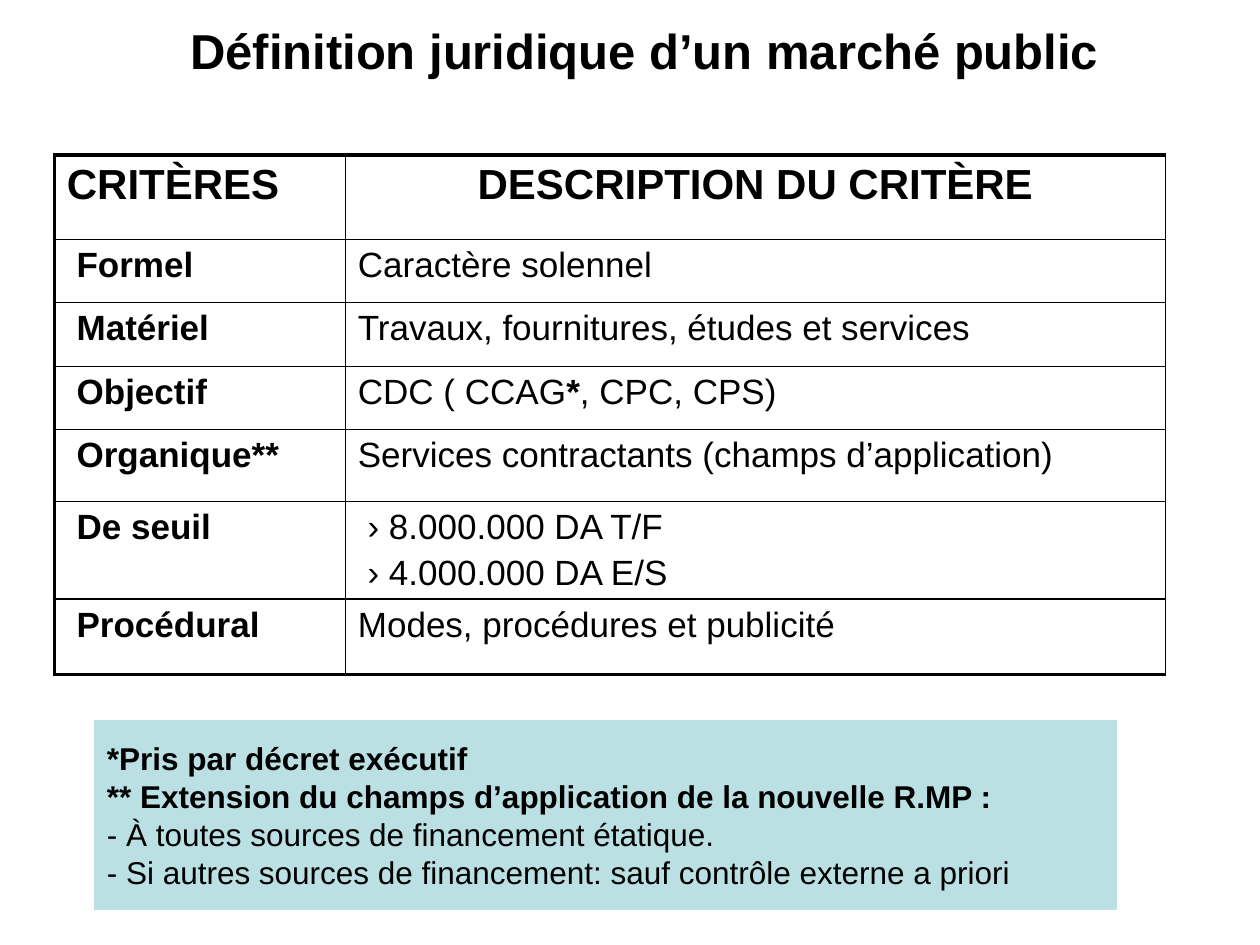
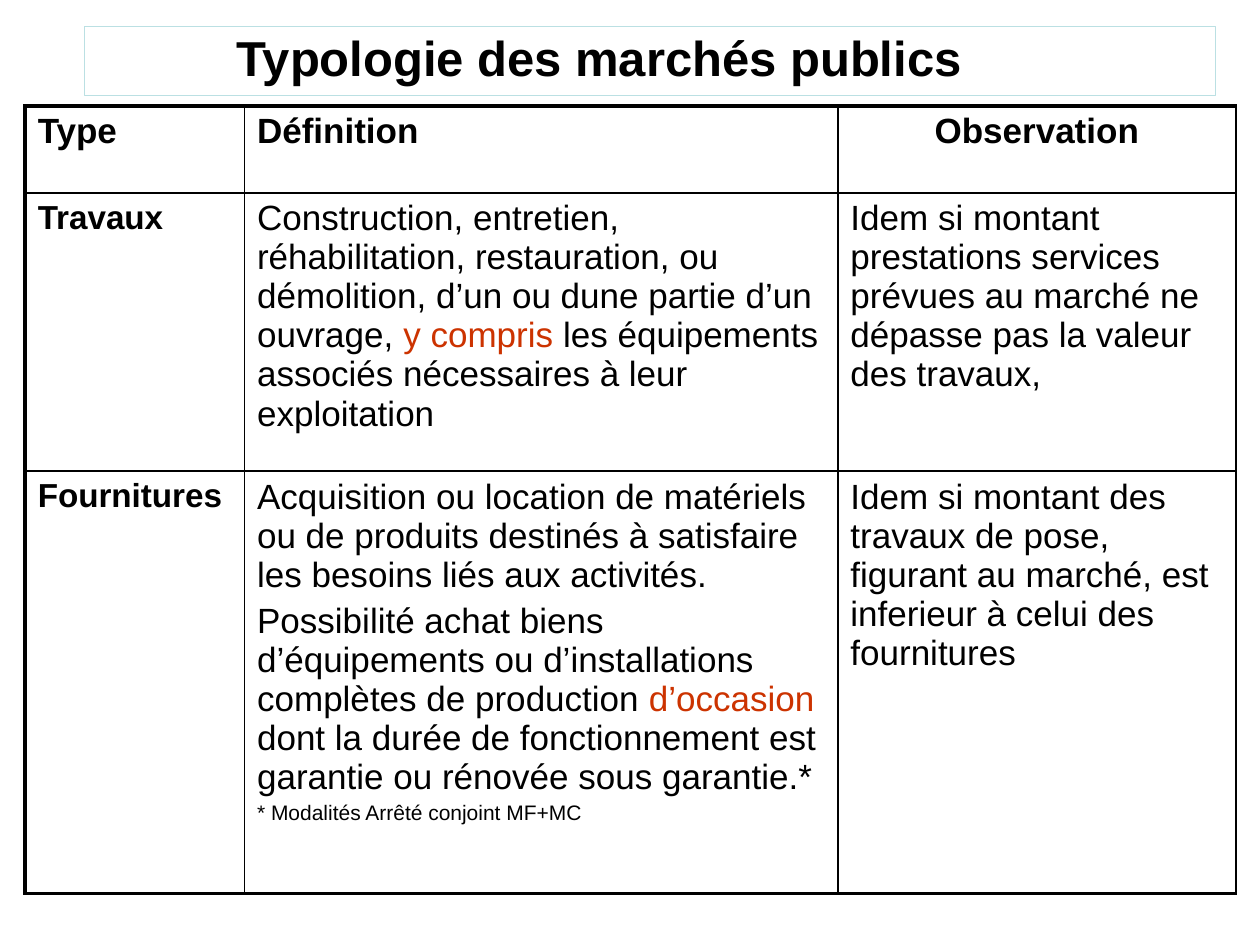
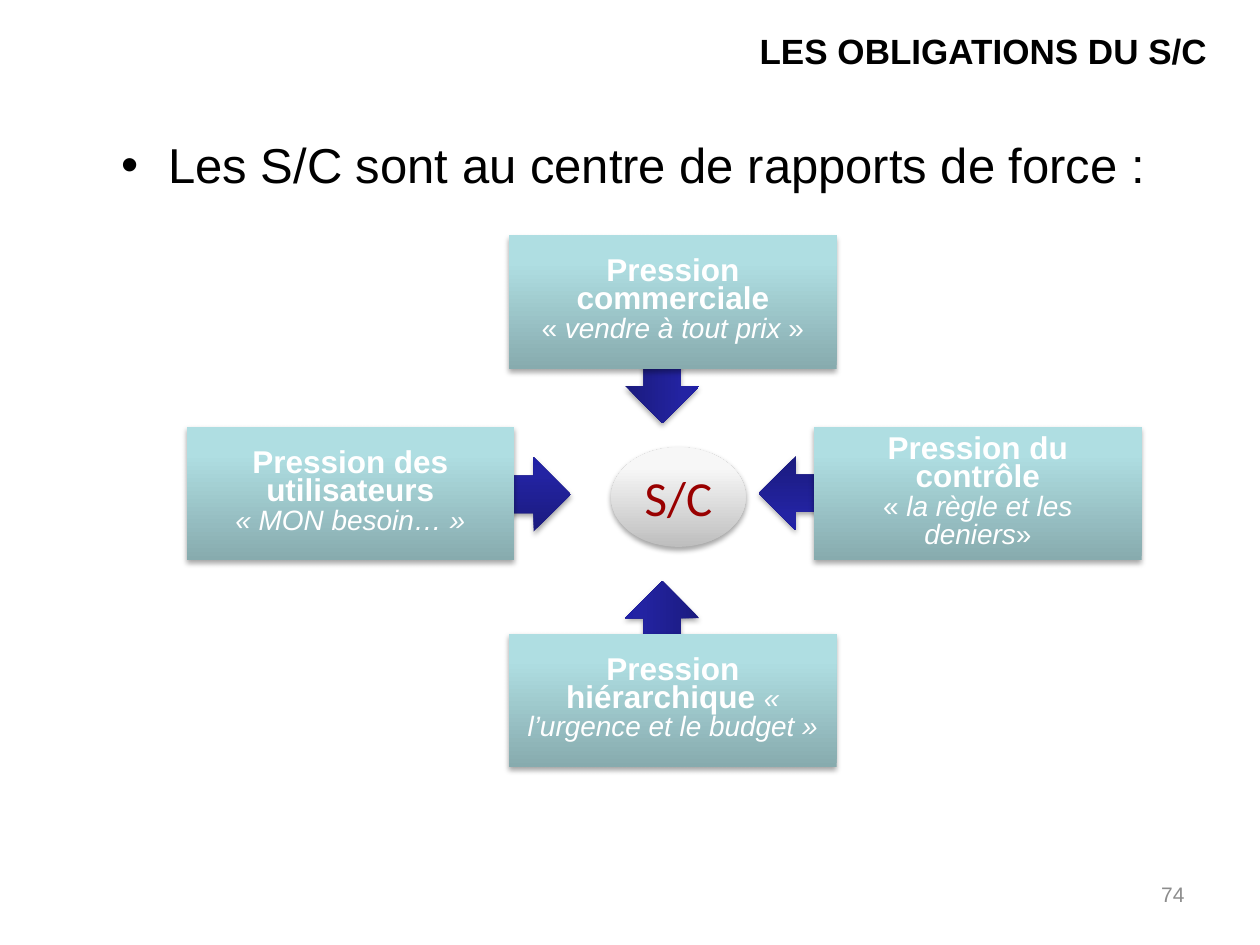
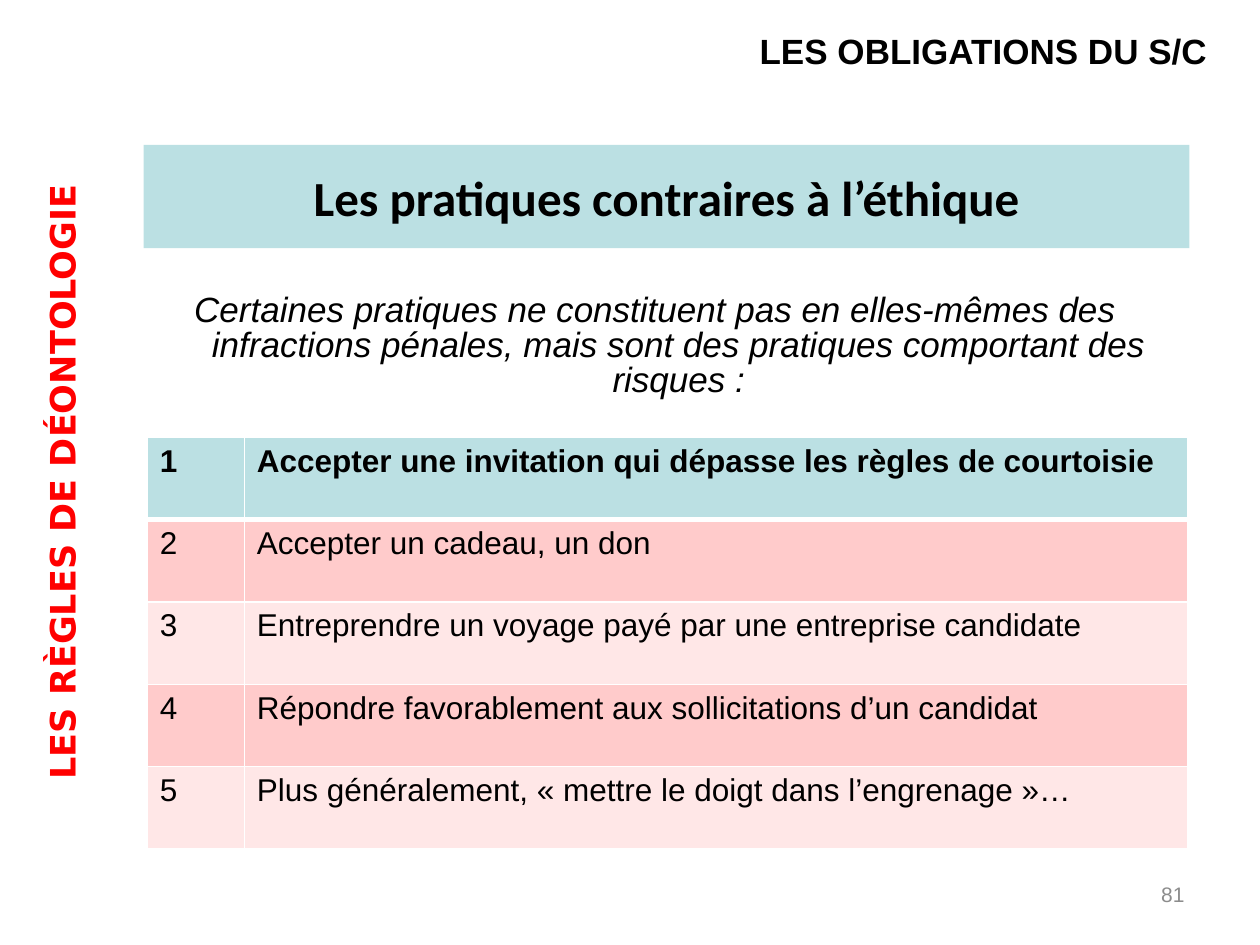
from copy import deepcopy
from dataclasses import dataclass
from typing import NamedTuple

from pptx import Presentation
from pptx.dml.color import RGBColor
from pptx.enum.shapes import MSO_SHAPE
from pptx.enum.text import MSO_ANCHOR, MSO_AUTO_SIZE, PP_ALIGN
from pptx.oxml.ns import qn
from pptx.oxml.xmlchemy import OxmlElement
from pptx.util import Pt

LEFT, CENTER, RIGHT = PP_ALIGN.LEFT, PP_ALIGN.CENTER, PP_ALIGN.RIGHT
TOP, MIDDLE, BOTTOM = MSO_ANCHOR.TOP, MSO_ANCHOR.MIDDLE, MSO_ANCHOR.BOTTOM
RECTANGLE, OVAL, ARROW = MSO_SHAPE.RECTANGLE, MSO_SHAPE.OVAL, MSO_SHAPE.RIGHT_ARROW
NO_AUTOFIT = MSO_AUTO_SIZE.NONE
TITLE_AND_BODY, TITLE_ONLY = 1, 5


@dataclass(frozen=True)
class Theme:
    """Colours, faces and type sizes shared by the slides."""

    ink: str = "000000"
    white: str = "FFFFFF"
    aqua: str = "BBE0E3"
    alert: str = "CC3300"
    hub: str = "990000"
    margin_note: str = "FF0000"
    page_number: str = "8C8C8C"
    bands: tuple = ("FFCBCB", "FFE7E7")
    card_stops: tuple = ((0, "87ABAE"), (0.8, "AFDEE2"), (1, "AFE0E4"))
    arrow_stops: tuple = ((0, "1B1B7E"), (0.8, "2323A3"), (1, "2020A6"))
    hub_stops: tuple = ((0, "BEBEBE"), (0.8, "F7F7F7"), (1, "F8F8F8"))
    face: str = "Arial"
    accent_face: str = "Calibri"
    side_face: str = "DejaVu Sans"
    title: int = 28
    heading: int = 24
    text: int = 20
    row_label: int = 19
    note: int = 18
    quote: int = 16
    small: int = 12
    thin: float = 1
    thick: float = 2.25
    header_rule: float = 3


THEME = Theme()


class Box(NamedTuple):
    """A rectangle in points."""

    left: float
    top: float
    width: float
    height: float

    def lengths(self):
        """Return the four measures as lengths."""
        return [Pt(value) for value in self]

    def inside(self, across, down, width, height):
        """Return a box placed relative to this one."""
        return Box(self.left + across, self.top + down, width, height)


@dataclass
class Span:
    """A stretch of text with its departures from the paragraph."""

    text: str
    bold: bool = None
    italic: bool = None
    size: float = None
    color: str = None


@dataclass
class Para:
    """A paragraph: its text or spans, and its format."""

    content: object
    size: float = THEME.text
    bold: bool = False
    italic: bool = False
    color: str = THEME.ink
    face: str = THEME.face
    align: object = LEFT
    line: float = None
    before: float = 0


OBLIGATIONS_BOX = Box(62, 2, 635, 54)


def rgb(color):
    """Turn a hex string into a colour."""
    return RGBColor.from_string(color)


def style_font(font, look):
    """Apply the settings that a span or paragraph names."""
    font.bold, font.italic = look.bold, look.italic
    if look.size:
        font.size = Pt(look.size)
    if look.color:
        font.color.rgb = rgb(look.color)


def write(frame, paras, anchor=None):
    """Fill a text frame with paragraphs."""
    frame.word_wrap = True
    if anchor is not None:
        frame.auto_size = NO_AUTOFIT
        frame.vertical_anchor = anchor
    for index, look in enumerate(paras):
        para = frame.add_paragraph() if index else frame.paragraphs[0]
        para.alignment = look.align
        para.space_before = Pt(look.before)
        if look.line:
            para.line_spacing = Pt(look.line)
        style_font(para.font, look)
        para.font.name = look.face
        spans = [Span(look.content)] if isinstance(look.content, str) else look.content
        for span in spans:
            run = para.add_run()
            run.text = span.text
            style_font(run.font, span)


def place(shape, box):
    """Move a shape to a box."""
    shape.left, shape.top, shape.width, shape.height = box.lengths()


def add_title(page, box, para, anchor, left=7.2, bottom=3.6):
    """Place and fill the title placeholder."""
    title = page.shapes.title
    place(title, box)
    write(title.text_frame, [para], anchor)
    title.text_frame.margin_left = Pt(left)
    title.text_frame.margin_bottom = Pt(bottom)
    return title


def add_obligations_title(page):
    """Write the heading shared by the obligations slides."""
    heading = Para("LES OBLIGATIONS DU S/C", bold=True, align=RIGHT)
    add_title(page, OBLIGATIONS_BOX, heading, MIDDLE)


def add_label(page, box, para, anchor=TOP):
    """Add a text box holding one paragraph."""
    label = page.shapes.add_textbox(*box.lengths())
    write(label.text_frame, [para], anchor)
    return label


def add_page_number(page, number):
    """Write the page number at the bottom right."""
    look = Para(number, THEME.small, color=THEME.page_number, align=RIGHT)
    add_label(page, Box(516.2, 500.4, 167.8, 28.8), look)


def add_panel(page, box, paras, line=None):
    """Add a flat aqua rectangle with text."""
    panel = page.shapes.add_shape(RECTANGLE, *box.lengths())
    panel.shadow.inherit = False
    panel.fill.solid()
    panel.fill.fore_color.rgb = rgb(THEME.aqua)
    outline(panel, line)
    write(panel.text_frame, paras, MIDDLE)


def outline(shape, color):
    """Give a shape a hairline, or none."""
    if color:
        shape.line.color.rgb = rgb(color)
        shape.line.width = Pt(0.75)
    else:
        shape.line.fill.background()


def add_glossy(page, preset, box, stops, paras=(), turn=0):
    """Add a shape with a vertical gradient and a soft shadow."""
    shape = page.shapes.add_shape(preset, *box.lengths())
    shape.rotation = turn
    outline(shape, None)
    fill = shape.fill
    fill.gradient()
    fill.gradient_angle = 90
    properties = shape.element.spPr
    stop_list = properties.find(qn("a:gradFill")).find(qn("a:gsLst"))
    stop_list.insert(1, deepcopy(stop_list[0]))
    for stop, (position, color) in zip(fill.gradient_stops, stops):
        stop.position = position
        stop.color.rgb = rgb(color)
    shape.shadow.inherit = False
    cast_shadow(properties.find(qn("a:effectLst")))
    if paras:
        write(shape.text_frame, paras, MIDDLE)


def cast_shadow(effects):
    """Add a soft shadow falling downwards."""
    shadow = OxmlElement("a:outerShdw")
    shadow.set("blurRad", str(Pt(3.1)))
    shadow.set("dist", str(Pt(1.8)))
    shadow.set("dir", "5400000")
    shadow.set("rotWithShape", "0")
    color = OxmlElement("a:srgbClr")
    color.set("val", THEME.ink)
    alpha = OxmlElement("a:alpha")
    alpha.set("val", "35000")
    color.append(alpha)
    shadow.append(color)
    effects.append(shadow)


def draw_borders(cell, color, widths):
    """Draw the left, right, top and bottom borders of a cell."""
    properties = cell._tc.get_or_add_tcPr()
    for side, width in zip("LRTB", widths):
        line = OxmlElement(f"a:ln{side}")
        line.set("w", str(Pt(width)))
        solid = OxmlElement("a:solidFill")
        tint = OxmlElement("a:srgbClr")
        tint.set("val", color)
        solid.append(tint)
        line.append(solid)
        properties.append(line)


def frame_widths(row, column, last):
    """Thicken the left, top and bottom of the table."""
    return (
        THEME.thin if column else THEME.thick,
        THEME.thin,
        THEME.thin if row else THEME.thick,
        THEME.thick if row == last else THEME.thin,
    )


def header_widths(row, column, last):
    """Thicken the rule under the first row."""
    return (
        THEME.thin,
        THEME.thin,
        THEME.header_rule if row == 1 else THEME.thin,
        THEME.header_rule if row == 0 else THEME.thin,
    )


def add_grid(page, box, columns, heights, cells, widths, line=THEME.ink, fills=None):
    """Add a table whose cells hold lists of paragraphs."""
    frame = page.shapes.add_table(len(heights), len(columns), *box.lengths())
    table = frame.table
    table.first_row = table.horz_banding = False
    for column, width in zip(table.columns, columns):
        column.width = Pt(width)
    for row, height in zip(table.rows, heights):
        row.height = Pt(height)
    for row, contents in enumerate(cells):
        for column, paras in enumerate(contents):
            cell = table.cell(row, column)
            draw_borders(cell, line, widths(row, column, len(heights) - 1))
            if fills:
                cell.fill.solid()
                cell.fill.fore_color.rgb = rgb(fills[row])
            else:
                cell.fill.background()
            write(cell.text_frame, paras)


def build_definition(deck):
    """Slide on the legal definition of a public contract."""
    page = deck.slides.add_slide(deck.slide_layouts[TITLE_ONLY])
    heading = Para("Définition juridique d’un marché public", THEME.title, bold=True)
    add_title(page, Box(62, -5.8, 646.6, 56.2), heading, BOTTOM, left=46.8, bottom=5.3)
    criteria = [
        ("Formel", ["Caractère solennel"]),
        ("Matériel", ["Travaux, fournitures, études et services"]),
        ("Objectif", [[Span("CDC ( CCAG"), Span("*", bold=True), Span(", CPC, CPS)")]]),
        ("Organique**", ["Services contractants (champs d’application)"]),
        ("De seuil", [" › 8.000.000 DA T/F", " › 4.000.000 DA E/S"]),
        ("Procédural", ["Modes, procédures et publicité"]),
    ]
    cells = [[
        [Para("CRITÈRES", THEME.heading, bold=True)],
        [Para("DESCRIPTION DU CRITÈRE", THEME.heading, bold=True, align=CENTER)],
    ]]
    for name, lines in criteria:
        description = [Para(line, before=4 if index else 0) for index, line in enumerate(lines)]
        cells.append([[Para(f" {name}", bold=True)], description])
    add_grid(page, Box(31, 88.6, 635, 296.6), [166.3, 468.7],
             [48.2, 36, 36.7, 36, 41, 55.4, 43.2], cells, frame_widths)
    notes = [
        ("*Pris par décret exécutif", True),
        ("** Extension du champs d’application de la nouvelle R.MP :", True),
        ("- À toutes sources de financement étatique.", False),
        ("- Si autres sources de financement: sauf contrôle externe a priori", False),
    ]
    paras = [Para(text, THEME.note, bold=bold) for text, bold in notes]
    add_panel(page, Box(54, 411.8, 584, 108), paras, line=THEME.aqua)


def build_typology(deck):
    """Slide on the types of public contract."""
    page = deck.slides.add_slide(deck.slide_layouts[TITLE_ONLY])
    heading = Para("Typologie des marchés publics", THEME.title, bold=True)
    title = add_title(page, Box(48.2, 15.1, 646.6, 39.6), heading, BOTTOM, left=87, bottom=5.3)
    outline(title, THEME.aqua)
    works = Para([
        Span("Construction, entretien, réhabilitation, restauration, ou démolition, "
             "d’un ou dune partie d’un ouvrage, "),
        Span("y compris", color=THEME.alert),
        Span(" les équipements associés nécessaires à leur exploitation"),
    ])
    supplies = [
        Para("Acquisition ou location de matériels ou de produits destinés à "
             "satisfaire les besoins liés aux activités."),
        Para([
            Span("Possibilité achat biens d’équipements ou d’installations "
                 "complètes de production "),
            Span("d’occasion", color=THEME.alert),
            Span(" dont la durée de fonctionnement est garantie ou rénovée sous garantie.*"),
        ], before=4),
        Para("* Modalités Arrêté conjoint MF+MC", THEME.small, before=2.4),
    ]
    cells = [
        [
            [Para("Type", bold=True)],
            [Para("Définition", bold=True)],
            [Para("Observation", bold=True, align=CENTER)],
        ],
        [
            [Para("Travaux", THEME.row_label, bold=True)],
            [works],
            [Para("Idem si montant prestations services prévues au marché ne "
                  "dépasse pas la valeur des travaux,")],
        ],
        [
            [Para("Fournitures", THEME.row_label, bold=True)],
            supplies,
            [Para("Idem si montant des travaux de pose, figurant au marché, est "
                  "inferieur à celui des fournitures")],
        ],
    ]
    add_grid(page, Box(14.4, 60.5, 692, 450), [125.3, 339.1, 227.5],
             [49.7, 159.1, 241.2], cells, frame_widths)


def card_para(content):
    """Return a centred white paragraph for a pressure card."""
    return Para(content, THEME.note, bold=True, color=THEME.white, align=CENTER, line=16)


def quote(text, italic=True):
    """Return a light span for the words under a pressure."""
    return Span(text, bold=False, italic=italic, size=THEME.quote)


def add_pressures(page, box):
    """Draw four pressures pointing at the hub."""
    for across, down, turn in [(250.6, 64.8, 90), (326.9, 126, 180),
                               (177.1, 126.7, 0), (250.6, 197.3, 270)]:
        add_glossy(page, ARROW, box.inside(across, down, 42.5, 42.5),
                   THEME.arrow_stops, turn=turn)
    cards = [
        (184.3, 0, [
            [Span("Pression commerciale")],
            [quote("« ", False), quote("vendre à tout prix"), quote(" »", False)],
        ]),
        (184.3, 227.5, [[Span("Pression hiérarchique "), quote("« l’urgence et le budget »")]]),
        (0, 109.4, [[Span("Pression des utilisateurs")], [quote("« MON besoin… »")]]),
        (358.6, 109.4, [
            [Span("Pression du contrôle")],
            [quote("« ", False), quote("la règle et les deniers"), quote("»", False)],
        ]),
    ]
    for across, down, lines in cards:
        add_glossy(page, RECTANGLE, box.inside(across, down, 187.2, 76.3),
                   THEME.card_stops, [card_para(line) for line in lines])
    hub = Para("S/C", THEME.title, color=THEME.hub, face=THEME.accent_face, align=CENTER)
    add_glossy(page, OVAL, box.inside(242.6, 121, 77, 56.9), THEME.hub_stops, [hub])


def build_pressures(deck):
    """Slide on the pressures around the contracting service."""
    page = deck.slides.add_slide(deck.slide_layouts[TITLE_AND_BODY])
    add_obligations_title(page)
    body = page.placeholders[1]
    place(body, Box(62, 73.4, 635.8, 73.4))
    lead = Para("Les S/C sont au centre de rapports de force :", THEME.title, before=6)
    write(body.text_frame, [lead], TOP)
    add_page_number(page, "74")
    add_pressures(page, Box(106.6, 134.6, 545.8, 303.8))


def build_practices(deck):
    """Slide on practices contrary to ethics."""
    page = deck.slides.add_slide(deck.slide_layouts[TITLE_AND_BODY])
    add_obligations_title(page)
    body = page.placeholders[1]
    place(body, Box(73.4, 101.5, 602, 298))
    lead = Para("Certaines pratiques ne constituent pas en elles-mêmes des infractions "
                "pénales, mais sont des pratiques comportant des risques :",
                italic=True, align=CENTER, line=20)
    write(body.text_frame, [lead], TOP)
    body.text_frame.margin_top = Pt(67)
    properties = body.text_frame.paragraphs[0]._p.get_or_add_pPr()
    properties.insert_element_before(OxmlElement("a:buNone"), "a:tabLst", "a:defRPr")
    add_page_number(page, "81")
    add_panel(page, Box(82.1, 82.8, 597.6, 59), [
        Para("Les pratiques contraires à l’éthique", THEME.title, bold=True,
             face=THEME.accent_face, align=CENTER)])
    practices = [
        "Accepter une invitation qui dépasse les règles de courtoisie",
        "Accepter un cadeau, un don",
        "Entreprendre un voyage payé par une entreprise candidate",
        "Répondre favorablement aux sollicitations d’un candidat",
        "Plus généralement, « mettre le doigt dans l’engrenage »…",
    ]
    cells = [
        [[Para(text, THEME.note, bold=number == 1)] for text in (str(number), practice)]
        for number, practice in enumerate(practices, 1)
    ]
    add_grid(page, Box(84.2, 249.8, 594.7, 235.5), [55.4, 539.3],
             [47.1] * len(practices), cells, header_widths, THEME.white,
             [THEME.aqua, *THEME.bands * 2])
    side = Para("LES RÈGLES DE DÉONTOLOGIE", bold=True, color=THEME.margin_note,
                face=THEME.side_face, align=CENTER)
    add_label(page, Box(-178.6, 248.4, 427.7, 54), side, MIDDLE).rotation = 270


def main():
    """Build and save the deck."""
    deck = Presentation()
    deck.slide_width, deck.slide_height = Pt(720), Pt(540)
    for build in (build_definition, build_typology, build_pressures, build_practices):
        build(deck)
    deck.save("out.pptx")


if __name__ == "__main__":
    main()
